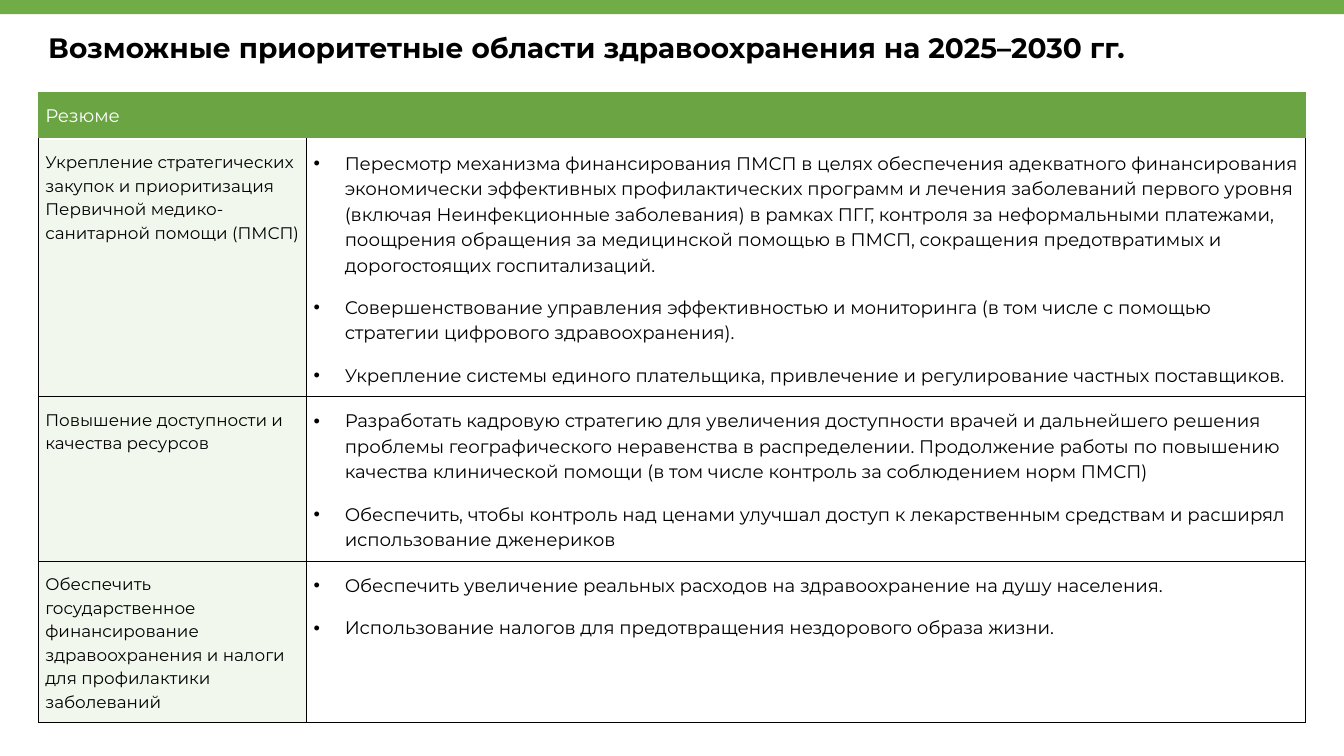
from dataclasses import dataclass

from lxml.etree import SubElement
from pptx import Presentation
from pptx.dml.color import RGBColor
from pptx.enum.shapes import MSO_SHAPE
from pptx.enum.text import MSO_AUTO_SIZE
from pptx.oxml.ns import qn
from pptx.util import Inches, Pt


@dataclass(frozen=True)
class Theme:
    font: str = "Montserrat"
    black: str = "000000"
    white: str = "FFFFFF"
    bar: str = "70AD47"
    header: str = "6AA443"
    label: str = "F1F7ED"
    title_size: int = 20
    body_size: int = 13
    label_size: int = 12
    border: float = 0.75


T = Theme()
W, H = 13.33, 7.5
MARGIN = 0.38
CONTENT_W = W - 2 * MARGIN
COLUMNS = (2.66, 9.91)
ROWS = (0.47, 1.99, 1.54, 1.38)
TABLE_H = 6.14
BULLET_INDENT = 0.31

TITLE = "Возможные приоритетные области здравоохранения на 2025–2030 гг."
HEADER = "Резюме"
PRIORITIES = [
    ("Укрепление стратегических закупок и приоритизация Первичной медико-санитарной помощи (ПМСП)", [
        "Пересмотр механизма финансирования ПМСП в целях обеспечения адекватного финансирования "
        "экономически эффективных профилактических программ и лечения заболеваний первого уровня "
        "(включая Неинфекционные заболевания) в рамках ПГГ, контроля за неформальными платежами, "
        "поощрения обращения за медицинской помощью в ПМСП, сокращения предотвратимых и "
        "дорогостоящих госпитализаций.",
        "Совершенствование управления эффективностью и мониторинга (в том числе с помощью "
        "стратегии цифрового здравоохранения).",
        "Укрепление системы единого плательщика, привлечение и регулирование частных поставщиков.",
    ]),
    ("Повышение доступности и качества ресурсов", [
        "Разработать кадровую стратегию для увеличения доступности врачей и дальнейшего решения "
        "проблемы географического неравенства в распределении. Продолжение работы по повышению "
        "качества клинической помощи (в том числе контроль за соблюдением норм ПМСП)",
        "Обеспечить, чтобы контроль над ценами улучшал доступ к лекарственным средствам и расширял "
        "использование дженериков",
    ]),
    ("Обеспечить государственное финансирование здравоохранения и налоги для профилактики заболеваний", [
        "Обеспечить увеличение реальных расходов на здравоохранение на душу населения.",
        "Использование налогов для предотвращения нездорового образа жизни.",
    ]),
]


def set_attrs(obj, values):
    for name, value in values.items():
        setattr(obj, name, value)


def write(tf, texts, size, color=T.black, bold=False, bullets=False):
    for i, text in enumerate(texts):
        p = tf.paragraphs[0] if i == 0 else tf.add_paragraph()
        set_attrs(p, {"line_spacing": 1.15, "space_before": Pt(6), "space_after": Pt(6)})
        if bullets:
            pPr = p._p.get_or_add_pPr()
            pPr.set("marL", str(Inches(BULLET_INDENT)))
            pPr.set("indent", str(-Inches(BULLET_INDENT)))
            SubElement(pPr, qn("a:buFont"), typeface="Arial")
            SubElement(pPr, qn("a:buChar"), char="•")
        r = p.add_run()
        r.text = text
        set_attrs(r.font, {"name": T.font, "size": Pt(size), "bold": bold})
        r.font.color.rgb = RGBColor.from_string(color)


def format_cell(cell, fill=None, sides=""):
    set_attrs(cell, {"margin_left": Inches(0.07), "margin_right": Inches(0.07),
                     "margin_top": Inches(0.1), "margin_bottom": Inches(0.1)})
    # Borders come before the fill in the cell properties
    tcPr = cell._tc.get_or_add_tcPr()
    for side in "LRTB":
        if side in sides:
            ln = SubElement(tcPr, qn(f"a:ln{side}"), w=str(Pt(T.border)))
            SubElement(SubElement(ln, qn("a:solidFill")), qn("a:srgbClr"), val=T.black)
        elif not sides:
            SubElement(SubElement(tcPr, qn(f"a:ln{side}")), qn("a:noFill"))
    if fill:
        cell.fill.solid()
        cell.fill.fore_color.rgb = RGBColor.from_string(fill)
    else:
        cell.fill.background()


def add_top_bar(s, x, y, w, h):
    sp = s.shapes.add_shape(MSO_SHAPE.RECTANGLE, *map(Inches, (x, y, w, h)))
    sp.shadow.inherit = False
    sp.fill.solid()
    sp.fill.fore_color.rgb = RGBColor.from_string(T.bar)
    sp.line.fill.background()


def add_title(s, x, y, w, h):
    tf = s.shapes.add_textbox(*map(Inches, (x, y, w, h))).text_frame
    set_attrs(tf, {"word_wrap": True, "auto_size": MSO_AUTO_SIZE.SHAPE_TO_FIT_TEXT})
    write(tf, [TITLE], T.title_size, bold=True)


def add_priorities(s, x, y, w, h):
    frame = s.shapes.add_table(len(ROWS), len(COLUMNS), *map(Inches, (x, y, w, h)))
    table = frame.table
    set_attrs(table, {"first_row": False, "horz_banding": False})
    for column, width in zip(table.columns, COLUMNS):
        column.width = Inches(width)
    for row, height in zip(table.rows, ROWS):
        row.height = Inches(height)
    frame.height = Inches(h)

    # Header across both columns
    head, rest = table.cell(0, 0), table.cell(0, 1)
    head.merge(rest)
    for cell in (head, rest):
        format_cell(cell, T.header)
    write(head.text_frame, [HEADER], T.body_size, T.white)

    # One row per priority area
    for i, (area, actions) in enumerate(PRIORITIES, start=1):
        sides = "LRB" if i == 1 else "LRTB"
        label, detail = table.cell(i, 0), table.cell(i, 1)
        format_cell(label, T.label, sides)
        format_cell(detail, sides=sides)
        write(label.text_frame, [area], T.label_size)
        write(detail.text_frame, actions, T.body_size, bullets=True)


def main():
    prs = Presentation()
    set_attrs(prs, {"slide_width": Inches(W), "slide_height": Inches(H)})
    s = prs.slides.add_slide(prs.slide_layouts[6])
    add_top_bar(s, 0, 0, W, 0.14)
    add_priorities(s, MARGIN, 0.91, CONTENT_W, TABLE_H)
    add_title(s, MARGIN, 0.2, CONTENT_W, 0.66)
    prs.save("out.pptx")


if __name__ == "__main__":
    main()
